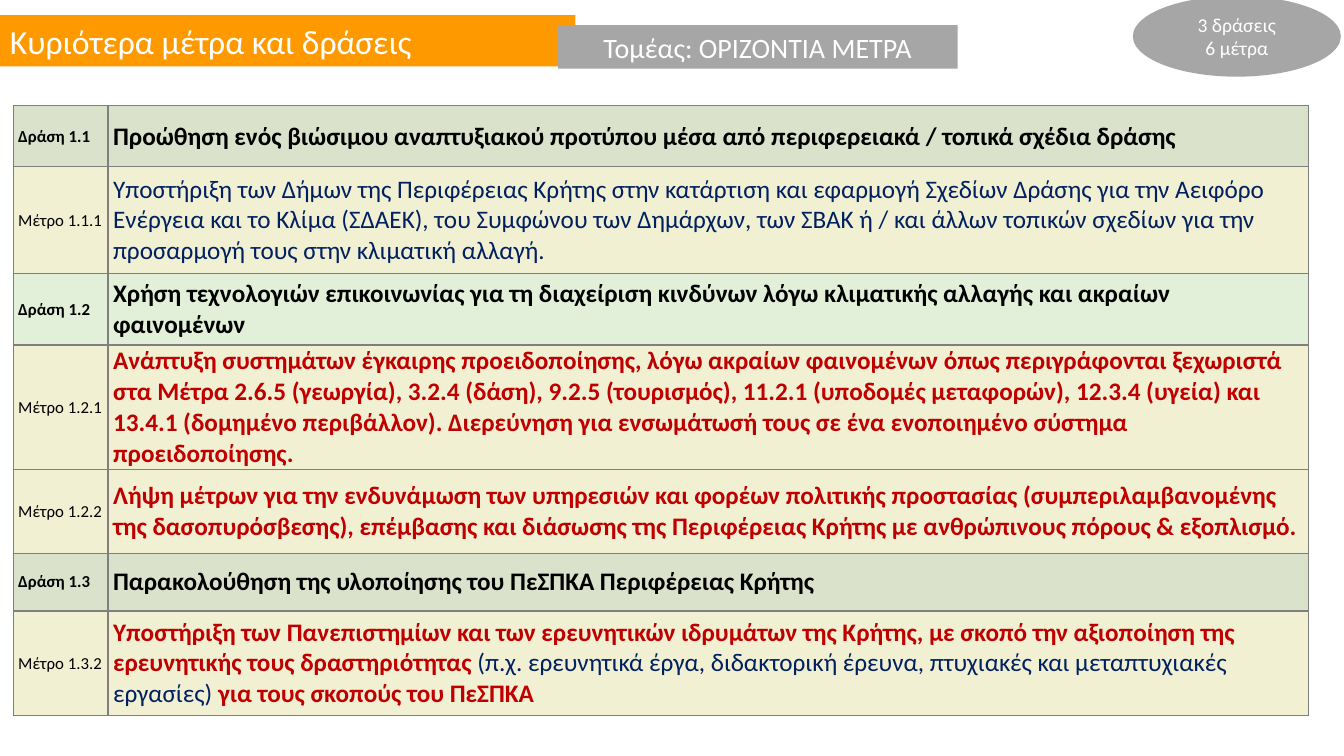
from lxml.etree import SubElement
from pptx import Presentation
from pptx.dml.color import RGBColor
from pptx.enum.shapes import MSO_SHAPE as Kind
from pptx.enum.text import MSO_ANCHOR as Anchor, PP_ALIGN as Align
from pptx.oxml.ns import qn
from pptx.util import Pt

FONT = "Calibri"
ORANGE, GREY, WHITE, BLACK = "FF9900", "A6A6A6", "FFFFFF", "000000"
NAVY, RED, LINE = "002060", "C00000", "7F7F7F"
SAGE, MINT, CREAM = "DAE2CB", "E2F0D9", "F1F0D3"

# kind, (left, top, width, height), fill, text size, alignment, lines
HEADS = [
    (Kind.RECTANGLE, (0, 10.8, 411, 36.6), ORANGE, 24, Align.LEFT,
     ["Κυριότερα μέτρα και δράσεις"]),
    (Kind.RECTANGLE, (398.4, 18, 285.6, 31), GREY, 20, Align.CENTER,
     ["Τομέας: ΟΡΙΖΟΝΤΙΑ ΜΕΤΡΑ"]),
    (Kind.OVAL, (809.2, -2.8, 148.6, 57.6), GREY, 14, Align.CENTER,
     ["3 δράσεις", "6 μέτρα"]),
]

LEFT, TOP = 9.4, 75.6
COLS = [67.8, 857.6]

# Each table holds rows of: height, fill, label, runs of (text, colour, bold)
TABLES = [
    [
        (43.6, SAGE, "Δράση 1.1", [
            ("Προώθηση ενός βιώσιμου αναπτυξιακού προτύπου μέσα από "
             "περιφερειακά / τοπικά σχέδια δράσης", BLACK, True)]),
        (76.4, CREAM, "Μέτρο 1.1.1", [
            ("Υποστήριξη των Δήμων της Περιφέρειας Κρήτης στην κατάρτιση και "
             "εφαρμογή Σχεδίων Δράσης για την Αειφόρο Ενέργεια και το Κλίμα "
             "(ΣΔΑΕΚ), του Συμφώνου των Δημάρχων, των ΣΒΑΚ ή / και άλλων "
             "τοπικών σχεδίων για την προσαρμογή τους στην κλιματική αλλαγή.",
             NAVY, False)]),
        (50.8, MINT, "Δράση 1.2", [
            ("Χρήση τεχνολογιών επικοινωνίας για τη διαχείριση κινδύνων λόγω "
             "κλιματικής αλλαγής και ακραίων φαινομένων", BLACK, True)]),
        (89.2, CREAM, "Μέτρο 1.2.1", [
            ("Ανάπτυξη συστημάτων έγκαιρης προειδοποίησης, λόγω ακραίων "
             "φαινομένων όπως περιγράφονται ξεχωριστά στα Μέτρα 2.6.5 "
             "(γεωργία), 3.2.4 (δάση), 9.2.5 (τουρισμός), 11.2.1 (υποδομές "
             "μεταφορών), 12.3.4 (υγεία) και 13.4.1 (δομημένο περιβάλλον). "
             "Διερεύνηση για ενσωμάτωσή τους σε ένα ενοποιημένο σύστημα "
             "προειδοποίησης.", RED, True)]),
    ],
    [
        (59.6, CREAM, "Μέτρο 1.2.2", [
            ("Λήψη μέτρων για την ενδυνάμωση των υπηρεσιών και φορέων "
             "πολιτικής προστασίας (συμπεριλαμβανομένης της δασοπυρόσβεσης), "
             "επέμβασης και διάσωσης της Περιφέρειας Κρήτης με ανθρώπινους "
             "πόρους & εξοπλισμό.", RED, True)]),
    ],
    [
        (41.2, SAGE, "Δράση 1.3", [
            ("Παρακολούθηση της υλοποίησης του ΠεΣΠΚΑ Περιφέρειας Κρήτης",
             BLACK, True)]),
        (74.8, CREAM, "Μέτρο 1.3.2", [
            ("Υποστήριξη των Πανεπιστημίων και των ερευνητικών ιδρυμάτων της "
             "Κρήτης, με σκοπό την αξιοποίηση της ερευνητικής τους "
             "δραστηριότητας ", RED, True),
            ("(π.χ. ερευνητικά έργα, διδακτορική έρευνα, πτυχιακές και "
             "μεταπτυχιακές εργασίες) ", NAVY, False),
            ("για τους σκοπούς του ΠεΣΠΚΑ", RED, True)]),
    ],
]
CELL = {"margin_left": Pt(3.6), "margin_right": Pt(3.6), "margin_top": 0,
        "margin_bottom": 0, "vertical_anchor": Anchor.MIDDLE}


def put(item, values):
    """Set attributes of item from a dict."""
    for name, value in values.items():
        setattr(item, name, value)


def paint(fill, tint):
    fill.solid()
    fill.fore_color.rgb = RGBColor.from_string(tint)


def add_run(para, text, size, tint, bold=False):
    run = para.add_run()
    run.text = text
    put(run.font, {"name": FONT, "size": Pt(size), "bold": bold})
    paint(run.font.fill, tint)


def add_head(slide, kind, box, tint, size, align, lines):
    shape = slide.shapes.add_shape(kind, *map(Pt, box))
    shape.shadow.inherit = False
    paint(shape.fill, tint)
    shape.line.fill.background()
    frame = shape.text_frame
    put(frame, {"word_wrap": True, "vertical_anchor": Anchor.MIDDLE})
    for i, text in enumerate(lines):
        para = frame.add_paragraph() if i else frame.paragraphs[0]
        para.alignment = align
        add_run(para, text, size, WHITE)


def fill_cell(cell, tint, size, runs):
    put(cell, CELL)
    for run in runs:
        text, ink, bold = run
        add_run(cell.text_frame.paragraphs[0], text, size, ink, bold)
    props = cell._tc.get_or_add_tcPr()
    for side in ("a:lnL", "a:lnR", "a:lnT", "a:lnB"):
        line = SubElement(props, qn(side), w=str(Pt(1)))
        solid = SubElement(line, qn("a:solidFill"))
        SubElement(solid, qn("a:srgbClr"), val=LINE)
    paint(cell.fill, tint)


def add_grid(slide, top, rows):
    """Add one table and return the position of its lower edge."""
    tall = sum(row[0] for row in rows)
    table = slide.shapes.add_table(len(rows), len(COLS), Pt(LEFT), Pt(top),
                                   Pt(sum(COLS)), Pt(tall)).table
    put(table, {"first_row": False, "horz_banding": False})
    for col, width in zip(table.columns, COLS):
        col.width = Pt(width)
    for row, (high, tint, label, runs) in zip(table.rows, rows):
        row.height = Pt(high)
        bold = label.startswith("Δράση")
        fill_cell(row.cells[0], tint, 12, [(label, BLACK, bold)])
        fill_cell(row.cells[1], tint, 18, runs)
    return top + tall


def main():
    deck = Presentation()
    put(deck, {"slide_width": Pt(960), "slide_height": Pt(540)})
    slide = deck.slides.add_slide(deck.slide_layouts[6])
    for head in HEADS:
        add_head(slide, *head)
    top = TOP
    for rows in TABLES:
        top = add_grid(slide, top, rows)
    deck.save("out.pptx")


if __name__ == "__main__":
    main()
